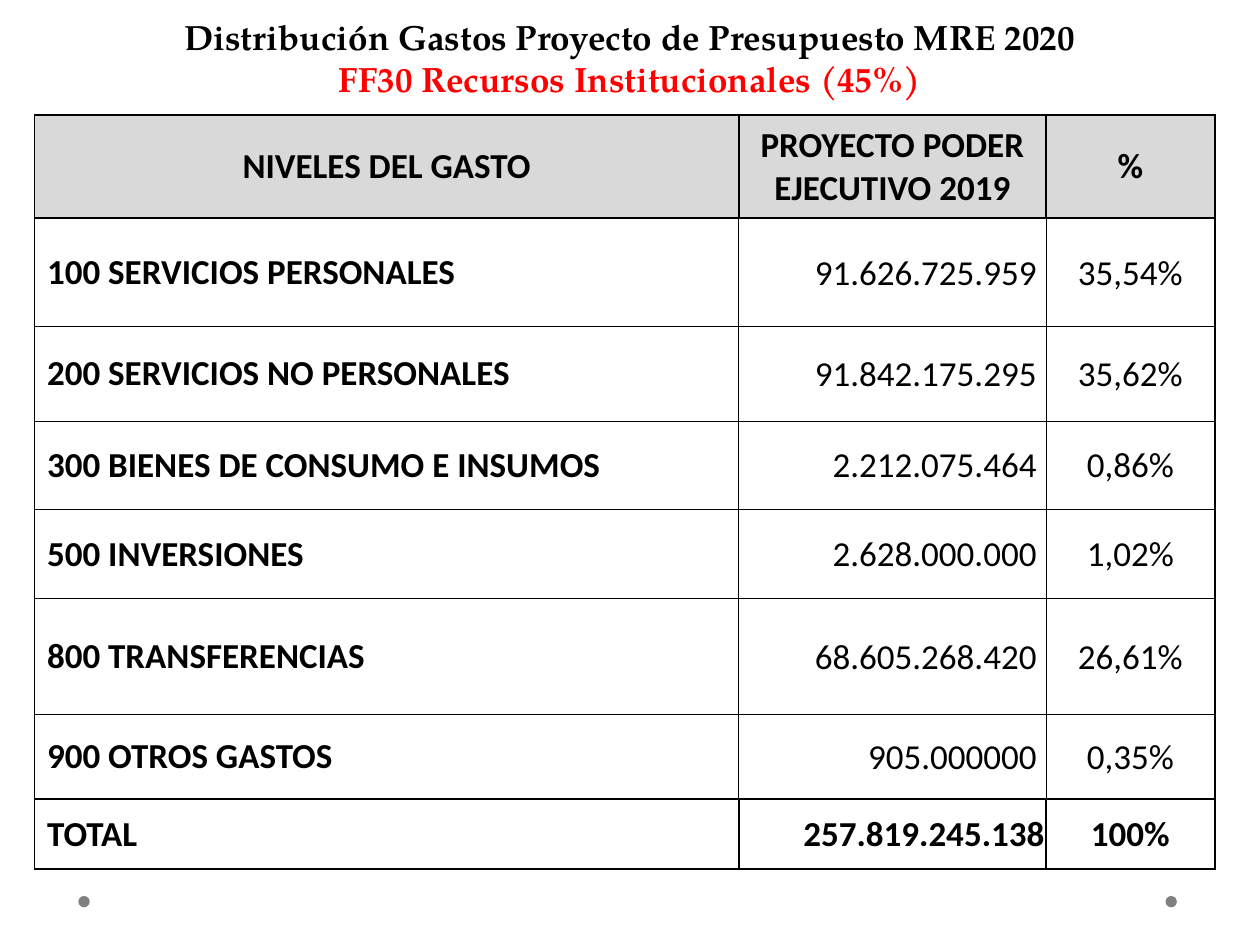
"""Build the slide on spending by level in the MRE 2020 budget proposal."""
import pptx
import pptx.dml.color
import pptx.enum.shapes
import pptx.enum.text
import pptx.oxml
import pptx.oxml.ns
import pptx.util

Pt = pptx.util.Pt
RGBColor = pptx.dml.color.RGBColor
ALIGN = pptx.enum.text.PP_ALIGN
ANCHOR = pptx.enum.text.MSO_ANCHOR

BLACK = RGBColor(0x00, 0x00, 0x00)
RED = RGBColor(0xFF, 0x00, 0x00)
HEADER_GREY = RGBColor(0xD9, 0xD9, 0xD9)
DOT_GREY = RGBColor(0x80, 0x80, 0x80)

TITLE_LINES = [
    ("Distribución Gastos Proyecto de Presupuesto MRE 2020", BLACK),
    ("FF30 Recursos Institucionales (45%)", RED),
]
BUDGET_ROWS = [
    ("NIVELES DEL GASTO", "PROYECTO PODER EJECUTIVO 2019", "%"),
    ("100 SERVICIOS PERSONALES", "91.626.725.959", "35,54%"),
    ("200 SERVICIOS NO PERSONALES", "91.842.175.295", "35,62%"),
    ("300 BIENES DE CONSUMO E INSUMOS", "2.212.075.464", "0,86%"),
    ("500 INVERSIONES", "2.628.000.000", "1,02%"),
    ("800 TRANSFERENCIAS", "68.605.268.420", "26,61%"),
    ("900 OTROS GASTOS", "905.000000", "0,35%"),
    ("TOTAL", "257.819.245.138", "100%"),
]
COLUMN_WIDTHS = [402.5, 175.5, 96.5]
ROW_HEIGHTS = [59, 62, 54, 50.5, 51, 66, 48.5, 40]
COLUMN_ALIGNS = [ALIGN.LEFT, ALIGN.RIGHT, ALIGN.CENTER]
WIDE_MARGINS = (7.2, 3.6, 7.2, 3.6)
TIGHT_MARGINS = (0.7, 0.7, 0.7, 0)
AMOUNT_MARGINS = (0.7, 0.7, 5.2, 0)


def write_text(para, text, font="Calibri", size=20, color=BLACK, bold=False, align=ALIGN.LEFT):
    """Write one formatted span into a paragraph."""
    para.alignment = align
    span = para.add_run()
    span.text = text
    span.font.name = font
    span.font.size = Pt(size)
    span.font.bold = bold
    span.font.color.rgb = color


def add_title(page):
    """Place the two-line title in its placeholder."""
    box = page.shapes.title
    box.left, box.top, box.width, box.height = Pt(0), Pt(-8), Pt(720), Pt(68.5)
    frame = box.text_frame
    frame.auto_size = pptx.enum.text.MSO_AUTO_SIZE.NONE
    frame.vertical_anchor = ANCHOR.BOTTOM
    for index, (text, color) in enumerate(TITLE_LINES):
        para = frame.add_paragraph() if index else frame.paragraphs[0]
        write_text(para, text, font="TeX Gyre Pagella", color=color, bold=True, align=ALIGN.CENTER)


def set_borders(cell, **weights):
    """Draw the cell edges with the given weights."""
    properties = cell._tc.get_or_add_tcPr()
    for side in "LRTB":
        properties.append(pptx.oxml.parse_xml(
            f'<a:ln{side} {pptx.oxml.ns.nsdecls("a")} w="{Pt(weights[side])}">'
            f'<a:solidFill><a:srgbClr val="{BLACK}"/></a:solidFill></a:ln{side}>'))


def fill_cell(cell, text, row, column):
    """Write and format a cell according to its place in the table."""
    last_row, last_column = len(BUDGET_ROWS) - 1, len(COLUMN_WIDTHS) - 1
    header, total = row == 0, row == last_row
    framed = header or total
    set_borders(
        cell,
        L=1 if framed or column == 0 else 0.5,
        R=1 if framed or column == last_column else 0.5,
        T=1 if framed or row == 1 else 0.5,
        B=1 if framed or row == last_row - 1 else 0.5,
    )
    if header:
        cell.fill.solid()
        cell.fill.fore_color.rgb = HEADER_GREY
    else:
        cell.fill.background()
    if header or column == 0:
        margins = WIDE_MARGINS
    elif column == 1 and not total:
        margins = AMOUNT_MARGINS
    else:
        margins = TIGHT_MARGINS
    cell.margin_left, cell.margin_top, cell.margin_right, cell.margin_bottom = map(Pt, margins)
    cell.vertical_anchor = ANCHOR.MIDDLE
    write_text(
        cell.text_frame.paragraphs[0], text, bold=framed or column == 0,
        align=ALIGN.CENTER if header else COLUMN_ALIGNS[column],
    )


def add_budget_table(page):
    """Add the table of spending levels."""
    table = page.shapes.add_table(
        len(ROW_HEIGHTS), len(COLUMN_WIDTHS), Pt(19.7), Pt(65.7),
        Pt(sum(COLUMN_WIDTHS)), Pt(sum(ROW_HEIGHTS)),
    ).table
    table.first_row = table.horz_banding = False
    for column, width in zip(table.columns, COLUMN_WIDTHS):
        column.width = Pt(width)
    for row, height in zip(table.rows, ROW_HEIGHTS):
        row.height = Pt(height)
    for row, texts in enumerate(BUDGET_ROWS):
        for column, text in enumerate(texts):
            fill_cell(table.cell(row, column), text, row, column)


def add_dot(page, left):
    """Add a small grey footer dot."""
    dot = page.shapes.add_shape(
        pptx.enum.shapes.MSO_SHAPE.OVAL, Pt(left), Pt(512), Pt(6.5), Pt(6.5))
    dot.shadow.inherit = False
    dot.fill.solid()
    dot.fill.fore_color.rgb = DOT_GREY
    dot.line.fill.background()


def main():
    """Build and save the deck."""
    deck = pptx.Presentation()
    deck.slide_width, deck.slide_height = Pt(720), Pt(540)
    page = deck.slides.add_slide(deck.slide_layouts[5])
    for left in (666, 44.8):
        add_dot(page, left)
    add_title(page)
    add_budget_table(page)
    deck.save("out.pptx")


if __name__ == "__main__":
    main()
